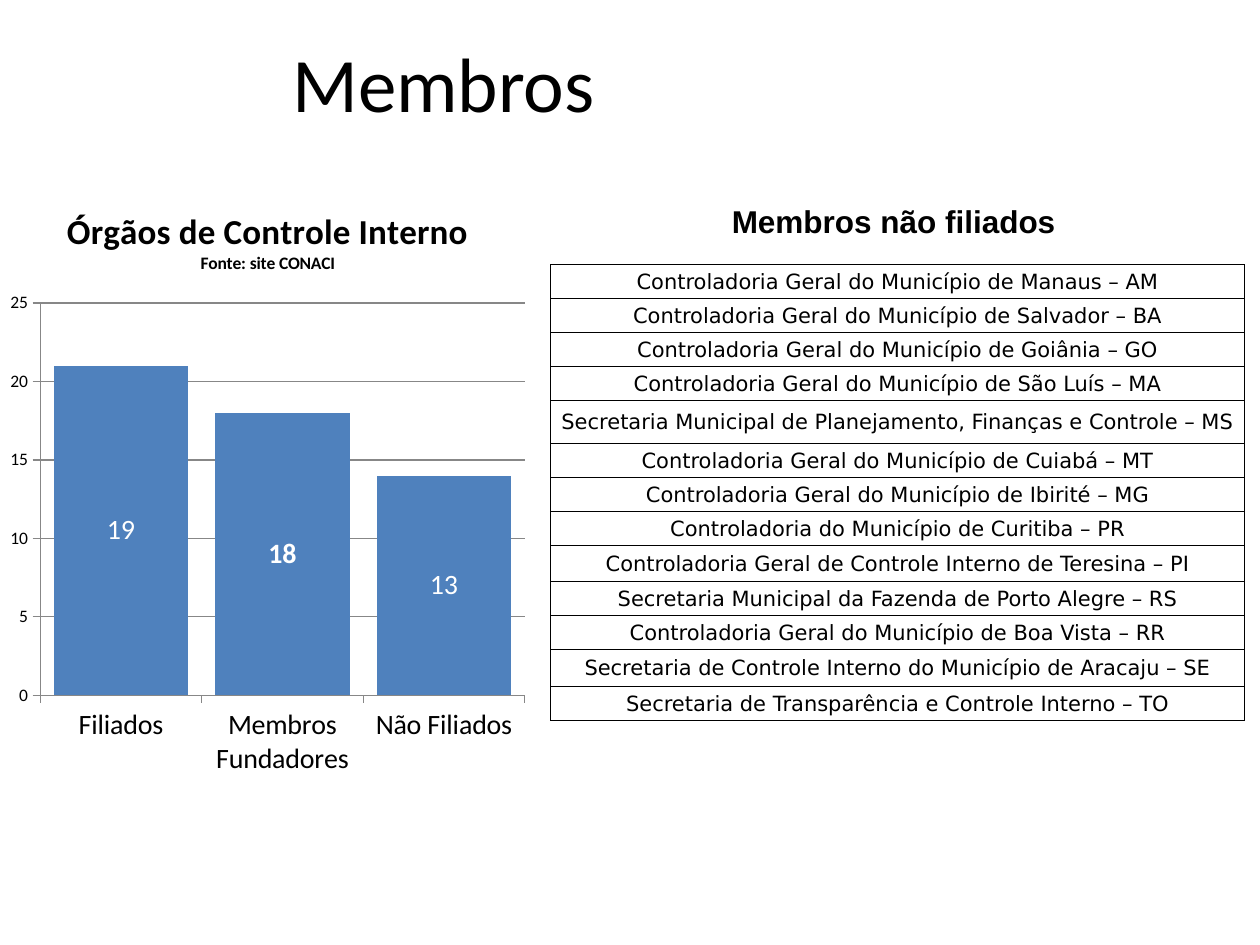
from dataclasses import dataclass

from lxml import etree
from pptx import Presentation
from pptx import util as u
from pptx.chart.data import CategoryChartData
from pptx.dml.color import RGBColor
from pptx.enum import chart as ch, text
from pptx.oxml import parse_xml
from pptx.oxml.ns import nsdecls, qn


@dataclass(frozen=True)
class Theme:
    ink: str = "000000"
    paper: str = "FFFFFF"
    bar: str = "4F81BD"
    rule: str = "878787"
    main_font: str = "Calibri"
    heading_font: str = "Arial"
    table_font: str = "DejaVu Sans"
    title: float = 44
    chart_title: float = 20
    heading: float = 18
    label: float = 16
    cell: float = 12
    small: float = 10
    border: float = 0.5


class Deck:
    """Holds the theme and current slide; boxes are (left, top, width, height) shares."""

    def __init__(self, theme):
        self.theme = theme
        self.prs = Presentation()
        self.prs.slide_width, self.prs.slide_height = u.Inches(10), u.Inches(7.5)
        self.slide = self.prs.slides.add_slide(self.prs.slide_layouts[5])

    def place(self, box):
        sides = (self.prs.slide_width, self.prs.slide_height) * 2
        return [round(share * side) for share, side in zip(box, sides)]

    def style(self, font, size, color=None, name=None, bold=False):
        font.size, font.bold = u.Pt(size), bold
        font.name = name or self.theme.main_font
        font.color.rgb = RGBColor.from_string(color or self.theme.ink)

    def title(self, wording, box):
        title = self.slide.shapes.title
        title.left, title.top, title.width, title.height = self.place(box)
        title.text_frame.vertical_anchor = text.MSO_ANCHOR.MIDDLE
        title.text_frame.text = wording
        line = title.text_frame.paragraphs[0]
        line.alignment = text.PP_ALIGN.CENTER
        self.style(line.font, self.theme.title)

    def heading(self, wording, box):
        frame = self.slide.shapes.add_textbox(*self.place(box)).text_frame
        frame.word_wrap = False
        frame.auto_size = text.MSO_AUTO_SIZE.SHAPE_TO_FIT_TEXT
        frame.text = wording
        self.style(frame.paragraphs[0].font, self.theme.heading,
                   name=self.theme.heading_font, bold=True)

    def column_chart(self, counts, title_lines, shown, plot_box, box):
        """Draw stacked columns; shown maps a point's index to its own label."""
        theme = self.theme
        data = CategoryChartData()
        data.categories = list(counts)
        data.add_series("Series 1", list(counts.values()))
        chart = self.slide.shapes.add_chart(
            ch.XL_CHART_TYPE.COLUMN_STACKED, *self.place(box), data).chart
        self.style(chart.font, theme.small)
        chart.has_legend = False

        heading = chart.chart_title.text_frame
        heading.text = "\n".join(title_lines)
        for line, size in zip(heading.paragraphs, (theme.chart_title, theme.small)):
            self.style(line.font, size, bold=True)
        chart.chart_title.include_in_layout = False

        chart.category_axis.major_tick_mark = ch.XL_TICK_MARK.OUTSIDE
        self.style(chart.category_axis.tick_labels.font, theme.label)
        values = chart.value_axis
        values.minimum_scale, values.maximum_scale, values.major_unit = 0, 25, 5
        values.major_tick_mark = ch.XL_TICK_MARK.OUTSIDE
        rule = RGBColor.from_string(theme.rule)
        for line in (chart.category_axis.format.line, values.format.line,
                     values.major_gridlines.format.line):
            line.color.rgb, line.width = rule, u.Pt(0.75)

        plot = chart.plots[0]
        plot.gap_width, plot.overlap, plot.vary_by_categories = 20, 100, False
        series = plot.series[0]
        series.format.fill.solid()
        series.format.fill.fore_color.rgb = RGBColor.from_string(theme.bar)
        labels = series.data_labels
        labels.show_value = True
        self.style(labels.font, theme.label, theme.paper, bold=True)
        for index, wording in shown.items():
            label = series.points[index].data_label.text_frame
            label.text = wording
            self.style(label.paragraphs[0].font, theme.label, theme.paper)
        self.fix_plot(chart, plot_box)

    def fix_plot(self, chart, plot_box):
        """Pin the inner plot area to shares of the chart."""
        area = chart.plots[0]._element.getparent()
        for old in area.findall(qn("c:layout")):
            area.remove(old)
        sizes = "".join(f'<c:{key} val="{share}"/>' for key, share in zip("xywh", plot_box))
        area.insert(0, parse_xml(
            f'<c:layout {nsdecls("c")}><c:manualLayout><c:layoutTarget val="inner"/>'
            f'<c:xMode val="edge"/><c:yMode val="edge"/>{sizes}'
            f'</c:manualLayout></c:layout>'))

    def list_table(self, entries, row_height, taller, box):
        """Draw one bordered column; taller maps a row's index to its own height."""
        table = self.slide.shapes.add_table(len(entries), 1, *self.place(box)).table
        table.first_row = table.horz_banding = False
        for index, entry in enumerate(entries):
            table.rows[index].height = u.Inches(taller.get(index, row_height))
            cell = table.cell(index, 0)
            cell.text = entry
            cell.vertical_anchor = text.MSO_ANCHOR.MIDDLE
            cell.margin_left = cell.margin_right = cell.margin_top = u.Inches(0.01)
            cell.margin_bottom = 0
            line = cell.text_frame.paragraphs[0]
            line.alignment = text.PP_ALIGN.CENTER
            self.style(line.font, self.theme.cell, name=self.theme.table_font)
            self.outline(cell)
            cell.fill.background()

    def outline(self, cell):
        props = cell._tc.get_or_add_tcPr()
        for side in "LRTB":
            edge = etree.SubElement(props, qn(f"a:ln{side}"),
                                    w=str(u.Pt(self.theme.border)))
            fill = etree.SubElement(edge, qn("a:solidFill"))
            etree.SubElement(fill, qn("a:srgbClr"), val=self.theme.ink)


COUNTS = {"Filiados": 21, "Membros Fundadores": 18, "Não Filiados": 14}
NON_MEMBERS = [
    "Controladoria Geral do Município de Manaus – AM",
    "Controladoria Geral do Município de Salvador – BA",
    "Controladoria Geral do Município de Goiânia – GO",
    "Controladoria Geral do Município de São Luís – MA",
    "Secretaria Municipal de Planejamento, Finanças e Controle – MS",
    "Controladoria Geral do Município de Cuiabá – MT",
    "Controladoria Geral do Município de Ibirité – MG",
    "Controladoria do Município de Curitiba – PR",
    "Controladoria Geral de Controle Interno de Teresina – PI",
    "Secretaria Municipal da Fazenda de Porto Alegre – RS",
    "Controladoria Geral do Município de Boa Vista – RR",
    "Secretaria de Controle Interno do Município de Aracaju – SE",
    "Secretaria de Transparência e Controle Interno – TO",
]


def main():
    deck = Deck(Theme())
    deck.title("Membros", (-0.098, 0.003, 0.9, 0.167))
    deck.column_chart(
        COUNTS, ["Órgãos de Controle Interno", "Fonte: site CONACI"],
        shown={0: "19", 2: "13"}, plot_box=(0.075, 0.195, 0.905, 0.65),
        box=(0, 0.196, 0.425, 0.639))
    deck.list_table(NON_MEMBERS, row_height=0.27, taller={4: 0.34, 8: 0.29, 11: 0.29},
                    box=(0.437, 0.28, 0.551, 0.483))
    deck.heading("Membros não filiados", (0.571, 0.207, 0.28, 0.053))
    deck.prs.save("out.pptx")


if __name__ == "__main__":
    main()
